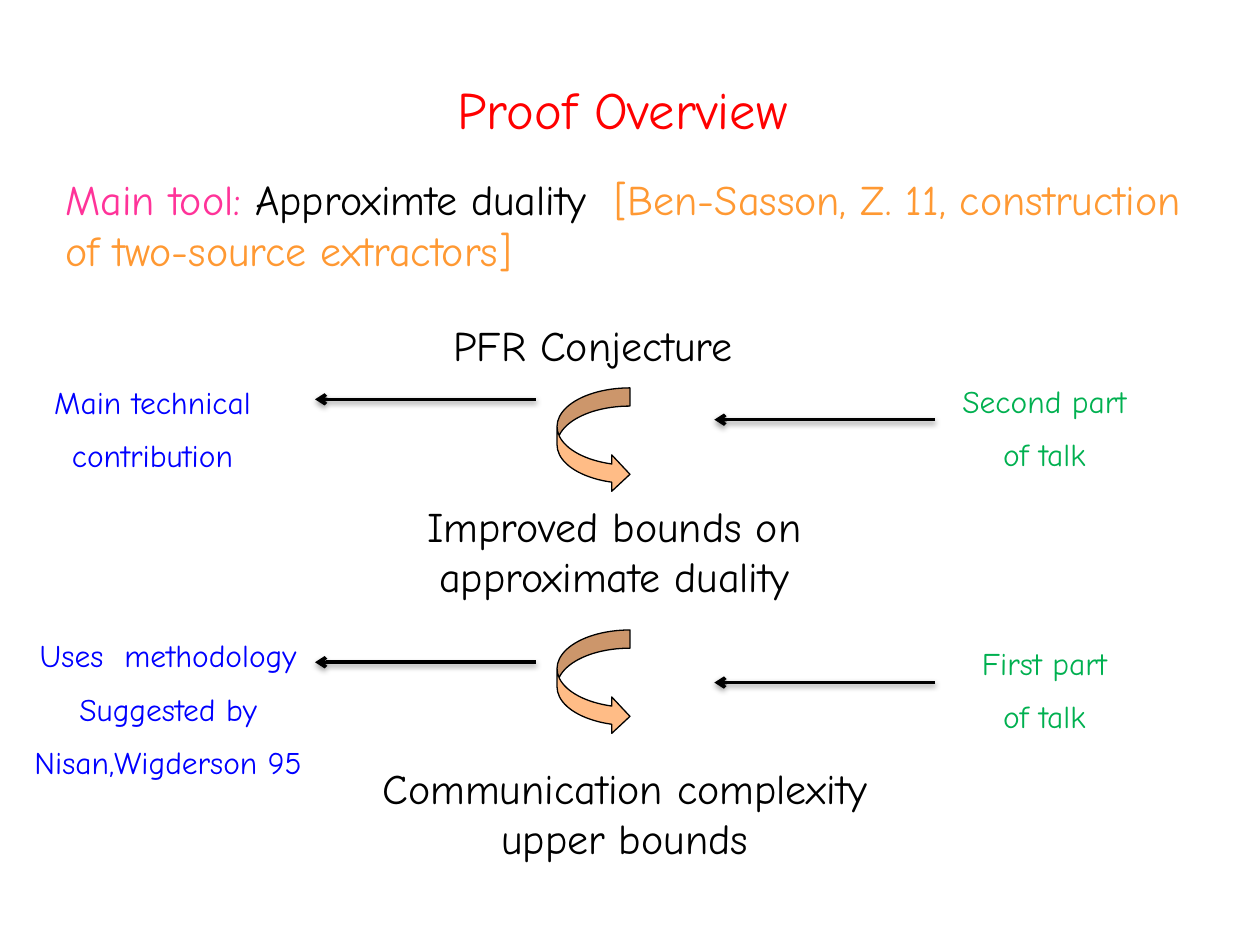
"""Build the proof overview slide with its chain of results and side remarks."""
from dataclasses import dataclass

from lxml.etree import SubElement
from pptx import Presentation
from pptx.dml.color import RGBColor
from pptx.enum.shapes import MSO_CONNECTOR as Connector, MSO_SHAPE as Shape
from pptx.enum.text import MSO_ANCHOR as Anchor, PP_ALIGN as Align
from pptx.oxml.ns import qn
from pptx.slide import Slide
from pptx.util import Cm, Pt

FONT = "Comic Neue"
BLACK = RGBColor(0x00, 0x00, 0x00)
RED = RGBColor(0xFF, 0x00, 0x00)
PINK = RGBColor(0xFF, 0x33, 0x99)
ORANGE = RGBColor(0xFF, 0x99, 0x33)
PEACH = RGBColor(0xFF, 0xBC, 0x86)
GREEN = RGBColor(0x00, 0xB0, 0x50)
BLUE = RGBColor(0x00, 0x00, 0xFF)

ARROW_LENGTH = 4.45
STAGE_STEP = 5.3


@dataclass(frozen=True)
class Label:
    left: float
    top: float
    width: float
    height: float
    paragraphs: tuple[tuple[tuple[str, RGBColor], ...], ...]
    size: int = 24
    align: Align = Align.CENTER
    anchor: Anchor = Anchor.TOP


@dataclass(frozen=True)
class Arrow:
    right: float
    top: float


def lines(color: RGBColor, *texts: str) -> tuple[tuple[tuple[str, RGBColor], ...], ...]:
    """Make one single-run paragraph per text."""
    return tuple(((text, color),) for text in texts)


MAIN_TOOL = (
    ("Main tool: ", PINK),
    ("Approximte duality  ", BLACK),
    ("[Ben-Sasson, Z. 11, construction of two-source extractors]", ORANGE),
)

LABELS = (
    Label(0.84, 0.79, 23.42, 2.79, lines(RED, "Proof Overview"), 30, anchor=Anchor.MIDDLE),
    Label(1.07, 3.38, 23.93, 2.31, (MAIN_TOOL,), align=Align.LEFT),
    Label(8.89, 6.32, 6.78, 1.27, lines(BLACK, "PFR Conjecture"), align=Align.LEFT),
    Label(7.62, 9.96, 9.53, 2.31, lines(BLACK, "Improved bounds on approximate duality")),
    Label(6.78, 15.24, 11.63, 2.31, lines(BLACK, "Communication complexity upper bounds")),
    Label(17.98, 7.57, 6.15, 2.18, lines(GREEN, "Second part", "of talk"), 18),
    Label(17.98, 12.85, 6.15, 2.18, lines(GREEN, "First part", "of talk"), 18),
    Label(0, 7.59, 6.15, 2.18, lines(BLUE, "Main technical", "contribution"), 18),
    Label(0, 12.7, 6.78, 3.33,
          lines(BLUE, "Uses  methodology", "Suggested by", "Nisan,Wigderson 95"), 18),
)

ARROWS = tuple(
    Arrow(right, top + stage * STAGE_STEP)
    for right, top in ((18.85, 8.46), (10.8, 8.05))
    for stage in range(2)
)
IMPLICATION_TOPS = (7.82, 12.7)


def draw_label(slide: Slide, label: Label) -> None:
    """Add a text box with coloured runs."""
    box = slide.shapes.add_textbox(
        Cm(label.left), Cm(label.top), Cm(label.width), Cm(label.height))
    text_frame = box.text_frame
    text_frame.word_wrap = True
    text_frame.vertical_anchor = label.anchor
    for index, runs in enumerate(label.paragraphs):
        paragraph = text_frame.add_paragraph() if index else text_frame.paragraphs[0]
        paragraph.alignment = label.align
        if index:
            paragraph.space_before = Pt(label.size / 2)
        for text, color in runs:
            run = paragraph.add_run()
            run.text = text
            run.font.name = FONT
            run.font.size = Pt(label.size)
            run.font.color.rgb = color


def draw_implication(slide: Slide, top: float) -> None:
    """Add a curved arrow leading from one result to the next."""
    shape = slide.shapes.add_shape(
        Shape.CURVED_RIGHT_ARROW, Cm(11.23), Cm(top), Cm(1.47), Cm(2.11))
    shape.shadow.inherit = False
    shape.fill.solid()
    shape.fill.fore_color.rgb = PEACH
    shape.line.color.rgb = BLACK
    shape.line.width = Pt(0.75)


def draw_arrow(slide: Slide, arrow: Arrow) -> None:
    """Add a leftward arrow with a soft shadow below it."""
    connector = slide.shapes.add_connector(
        Connector.STRAIGHT, Cm(arrow.right), Cm(arrow.top),
        Cm(arrow.right - ARROW_LENGTH), Cm(arrow.top))
    connector.line.color.rgb = BLACK
    connector.line.width = Pt(2)
    SubElement(connector.line._get_or_add_ln(), qn("a:tailEnd"), type="arrow")
    effects = SubElement(connector._element.spPr, qn("a:effectLst"))
    shadow = SubElement(effects, qn("a:outerShdw"), blurRad="40000", dist="20000",
                        dir="5400000", rotWithShape="0")
    color = SubElement(shadow, qn("a:srgbClr"), val=str(BLACK))
    SubElement(color, qn("a:alpha"), val="38000")


def main() -> None:
    """Draw the slide and save it."""
    presentation = Presentation()
    presentation.slide_width = Cm(25.4)
    presentation.slide_height = Cm(19.05)
    slide = presentation.slides.add_slide(presentation.slide_layouts[6])
    for label in LABELS:
        draw_label(slide, label)
    for top in IMPLICATION_TOPS:
        draw_implication(slide, top)
    for arrow in ARROWS:
        draw_arrow(slide, arrow)
    presentation.save("out.pptx")


if __name__ == "__main__":
    main()
